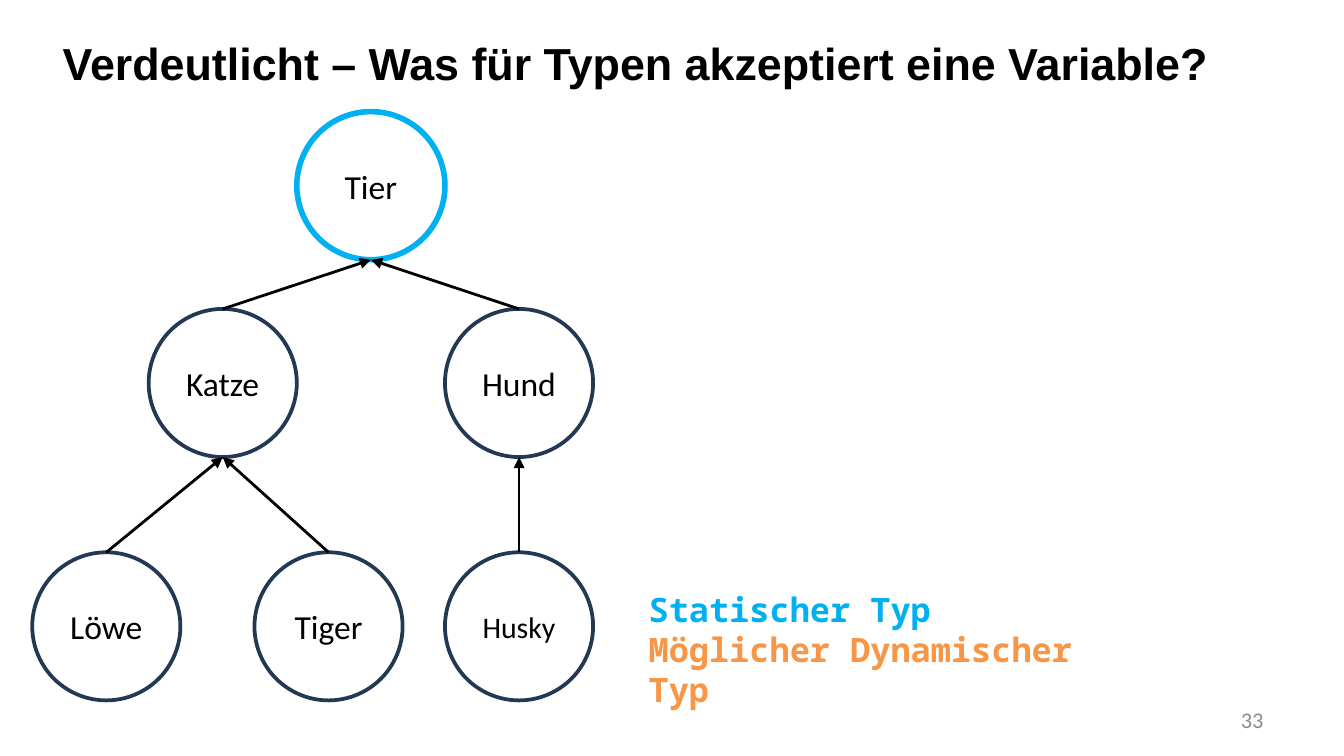
from lxml.etree import SubElement
from pptx import Presentation
from pptx.dml.color import RGBColor
from pptx.enum.shapes import MSO_CONNECTOR as CONN, MSO_SHAPE as SHAPE
from pptx.enum.text import MSO_ANCHOR as ANCHOR, MSO_AUTO_SIZE as AUTO, PP_ALIGN as ALIGN
from pptx.oxml.ns import qn
from pptx.util import Cm, Pt

STATIC, DYNAMIC, NAVY = "00B0F0", "F79646", "233953"
BLACK, WHITE, GREY = "000000", "FFFFFF", "8C8C8C"
D = 2.8  # circle diameter in cm


def rgb(value):
    return RGBColor.from_string(value)


def style(p, name, size, color, bold=False, align=ALIGN.LEFT):
    p.font.name, p.font.size, p.font.bold = name, Pt(size), bold
    p.font.color.rgb = rgb(color)
    p.alignment = align


prs = Presentation()
prs.slide_width, prs.slide_height = Cm(25.4), Cm(14.29)
layout = prs.slide_layouts[5]
s = prs.slides.add_slide(layout)

# Drop the template's footers, which lie below this slide height
for part in (layout, prs.slide_master):
    for sp in list(part.placeholders):
        if sp.top >= prs.slide_height:
            sp._element.getparent().remove(sp._element)

# Title
sp = s.shapes.title
sp.left, sp.top, sp.width, sp.height = Cm(0.93), Cm(0.55), Cm(22.56), Cm(1.27)
tf = sp.text_frame
tf.text = "Verdeutlicht – Was für Typen akzeptiert eine Variable?"
tf.word_wrap, tf.auto_size, tf.vertical_anchor = False, AUTO.NONE, ANCHOR.TOP
style(tf.paragraphs[0], "Arial", 24, BLACK, bold=True)

# Class tree: name, parent, left, top, text size
nodes = [
    ("Tier", None, 5.61, 2.11, 18),
    ("Katze", "Tier", 2.81, 5.84, 18),
    ("Hund", "Tier", 8.41, 5.84, 18),
    ("Löwe", "Katze", 0.61, 10.44, 18),
    ("Tiger", "Katze", 4.81, 10.44, 18),
    ("Husky", "Hund", 8.41, 10.44, 16),
]
places = {name: (left, top) for name, _, left, top, _ in nodes}

for name, parent, left, top, size in nodes:
    sp = s.shapes.add_shape(SHAPE.OVAL, Cm(left), Cm(top), Cm(D), Cm(D))
    sp.shadow.inherit = False
    sp.fill.solid()
    sp.fill.fore_color.rgb = rgb(WHITE)
    sp.line.color.rgb = rgb(NAVY if parent else STATIC)
    sp.line.width = Pt(2 if parent else 3)
    tf = sp.text_frame
    tf.text = name
    tf.vertical_anchor = ANCHOR.MIDDLE
    style(tf.paragraphs[0], "Calibri", size, BLACK, align=ALIGN.CENTER)

# Arrows from the top of each subclass to the bottom of its superclass
for name, parent, left, top, _ in nodes:
    if parent is None:
        continue
    px, py = places[parent]
    line = s.shapes.add_connector(CONN.STRAIGHT, Cm(left + D / 2), Cm(top),
                                  Cm(px + D / 2), Cm(py + D))
    line.line.color.rgb = rgb(BLACK)
    line.line.width = Pt(1.5)
    SubElement(line.line._get_or_add_ln(), qn("a:tailEnd"), type="triangle")
    SubElement(line._element.spPr, qn("a:effectLst"))

# Legend
tf = s.shapes.add_textbox(Cm(12.01), Cm(11), Cm(8.59), Cm(1.8)).text_frame
tf.word_wrap = True
tf.text = "Statischer Typ\nMöglicher Dynamischer Typ"
for p, color in zip(tf.paragraphs, (STATIC, DYNAMIC)):
    style(p, "Noto Sans Mono", 18, color, bold=True)

# Slide number
tf = s.shapes.add_textbox(Cm(18.21), Cm(13.25), Cm(5.92), Cm(0.76)).text_frame
tf.word_wrap, tf.vertical_anchor = True, ANCHOR.MIDDLE
tf.text = "33"
p = tf.paragraphs[0]
style(p, "Calibri", 12, GREY, align=ALIGN.RIGHT)
p.line_spacing, p.space_after = 0.9, Pt(6)

prs.save("out.pptx")
